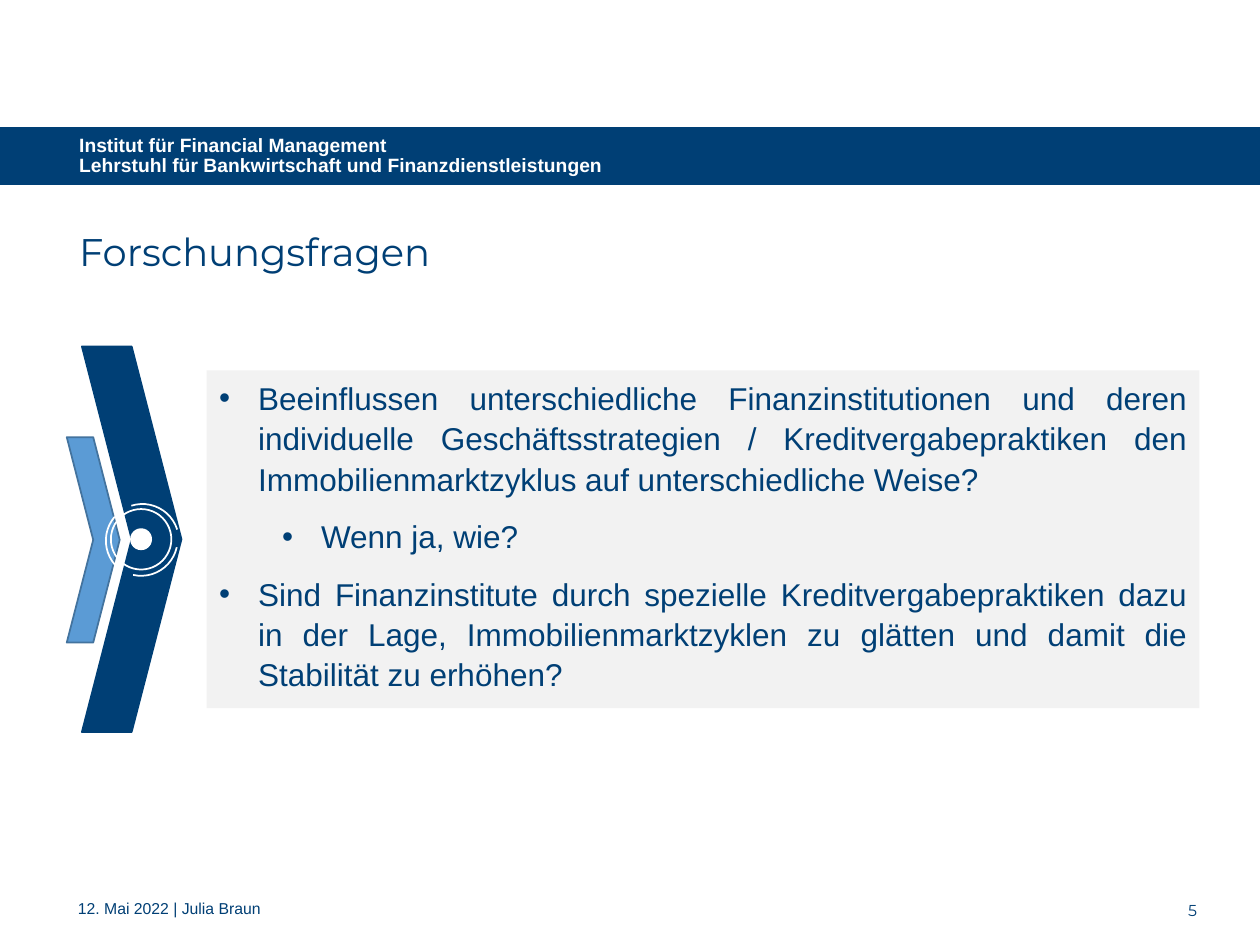
from pptx import Presentation
from pptx.dml.color import RGBColor as Rgb
from pptx.enum.shapes import MSO_SHAPE as Kind
from pptx.enum.text import MSO_ANCHOR as Anchor, PP_ALIGN as Align
from pptx.util import Inches, Pt
from lxml.etree import SubElement as Sub

COLORS = {"navy": "003F75", "blue": "5B9BD5", "edge": "43739E",
          "gray": "F2F2F2", "white": "FFFFFF"}
ITEMS = [
    (0, "Beeinflussen unterschiedliche Finanzinstitutionen und deren individuelle "
        "Geschäftsstrategien / Kreditvergabepraktiken den Immobilienmarktzyklus "
        "auf unterschiedliche Weise?"),
    (1, "Wenn ja, wie?"),
    (0, "Sind Finanzinstitute durch spezielle Kreditvergabepraktiken dazu in der Lage, "
        "Immobilienmarktzyklen zu glätten und damit die Stabilität zu erhöhen?"),
]
ARCS = [(0.84, 4, 220.9), (0.84, 4, 342.5), (0.83, 3.99, 102.6)]


class Deck:
    """Holds the style and the current slide."""

    def __init__(self):
        self.prs = Presentation()
        self.prs.slide_width, self.prs.slide_height = Inches(10), Inches(7.5)
        self.slide = self.prs.slides.add_slide(self.prs.slide_layouts[6])

    def color(self, name):
        return Rgb.from_string(COLORS[name])

    def shape(self, kind, box, fill=None, line=None, width=1, turn=0, home=None):
        home = home or self.slide
        shape = home.shapes.add_shape(kind, *map(Inches, box))
        shape.shadow.inherit = False
        shape.rotation = turn
        if fill:
            shape.fill.solid()
            shape.fill.fore_color.rgb = self.color(fill)
        else:
            shape.fill.background()
        if line:
            shape.line.color.rgb = self.color(line)
            shape.line.width = Pt(width)
        else:
            shape.line.fill.background()
        return shape

    def style(self, para, size, font="Arial", color="navy", bold=False):
        for run in para.runs:
            run.font.size, run.font.name, run.font.bold = Pt(size), font, bold
            run.font.color.rgb = self.color(color)

    def text(self, box, text, size, font="Arial", color="navy", bold=False,
             align=Align.LEFT, anchor=Anchor.TOP, space=None, inset=True):
        frame = self.slide.shapes.add_textbox(*map(Inches, box)).text_frame
        frame.word_wrap = True
        frame.vertical_anchor = anchor
        if not inset:
            frame.margin_left = frame.margin_right = 0
            frame.margin_top = frame.margin_bottom = 0
        frame.text = text
        para = frame.paragraphs[0]
        para.alignment, para.line_spacing = align, space
        self.style(para, size, font, color, bold)

    def bullets(self, box, items, size):
        frame = self.shape(Kind.RECTANGLE, box, "gray").text_frame
        frame.word_wrap = True
        frame.vertical_anchor = Anchor.TOP
        for i, (level, text) in enumerate(items):
            para = frame.add_paragraph() if i else frame.paragraphs[0]
            para.text = text
            para.level, para.alignment = level, Align.JUSTIFY
            para.line_spacing, para.space_before = Pt(23), Pt(10 if i else 0)
            props = para._p.get_or_add_pPr()
            props.set("marL", str(Inches(0.31 + 0.5 * level)))
            props.set("indent", str(Inches(-0.31)))
            space = props.nsmap["a"]
            Sub(props, f"{{{space}}}buFont", typeface="Arial")
            Sub(props, f"{{{space}}}buChar", char="•")
            self.style(para, size)

    def target(self):
        group = self.slide.shapes.add_group_shape()
        self.shape(Kind.OVAL, (0.88, 4.04, 0.48, 0.48), line="white", home=group)
        for left, top, turn in ARCS:
            self.shape(Kind.ARC, (left, top, 0.58, 0.58), line="white",
                       turn=turn, home=group)
        self.shape(Kind.OVAL, (1.04, 4.2, 0.16, 0.16), "white", "white", home=group)


def main():
    deck = Deck()
    deck.shape(Kind.RECTANGLE, (0, 1.01, 10, 0.45), "navy", "navy", 0.75)
    deck.text((8.99, 7.15, 0.51, 0.15), "5", 9, "Montserrat",
              align=Align.RIGHT, inset=False)
    deck.text((0.53, 1.76, 8.87, 0.63), "Forschungsfragen", 22, "Montserrat")
    deck.bullets((1.64, 2.94, 7.88, 2.68), ITEMS, 18)
    deck.text((0.53, 1.01, 8.98, 0.46),
              "Institut für Financial Management\v"
              "Lehrstuhl für Bankwirtschaft und Finanzdienstleistungen",
              11, color="white", bold=True, anchor=Anchor.MIDDLE, space=0.9)
    deck.shape(Kind.CHEVRON, (0.65, 2.75, 0.79, 3.06), "navy", "navy")
    deck.shape(Kind.CHEVRON, (0.53, 3.47, 0.42, 1.63), "blue", "edge")
    deck.text((0.52, 7.1, 8.09, 0.26), "12. Mai 2022 | Julia Braun", 9, space=0.9)
    deck.target()
    deck.prs.save("out.pptx")


if __name__ == "__main__":
    main()
